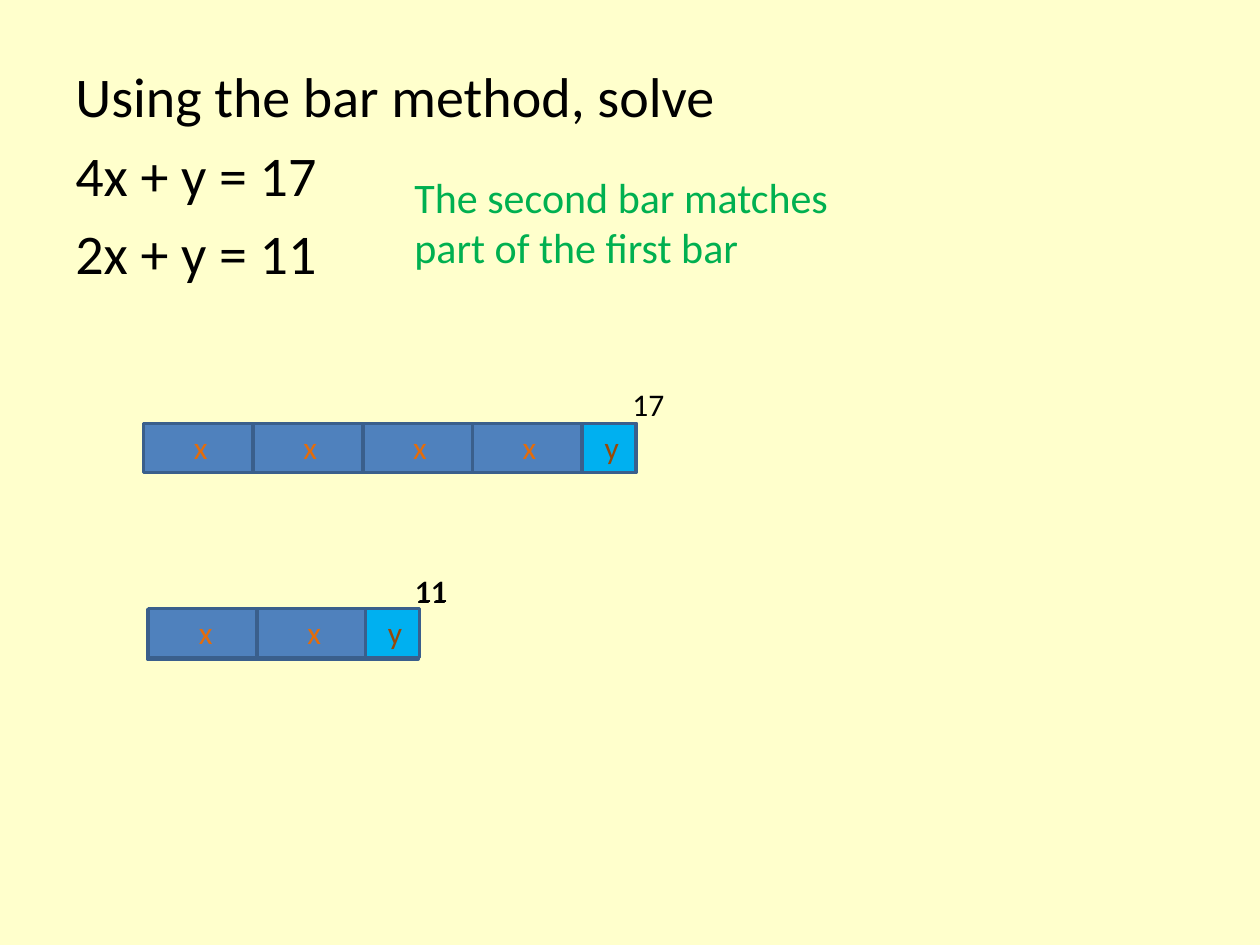
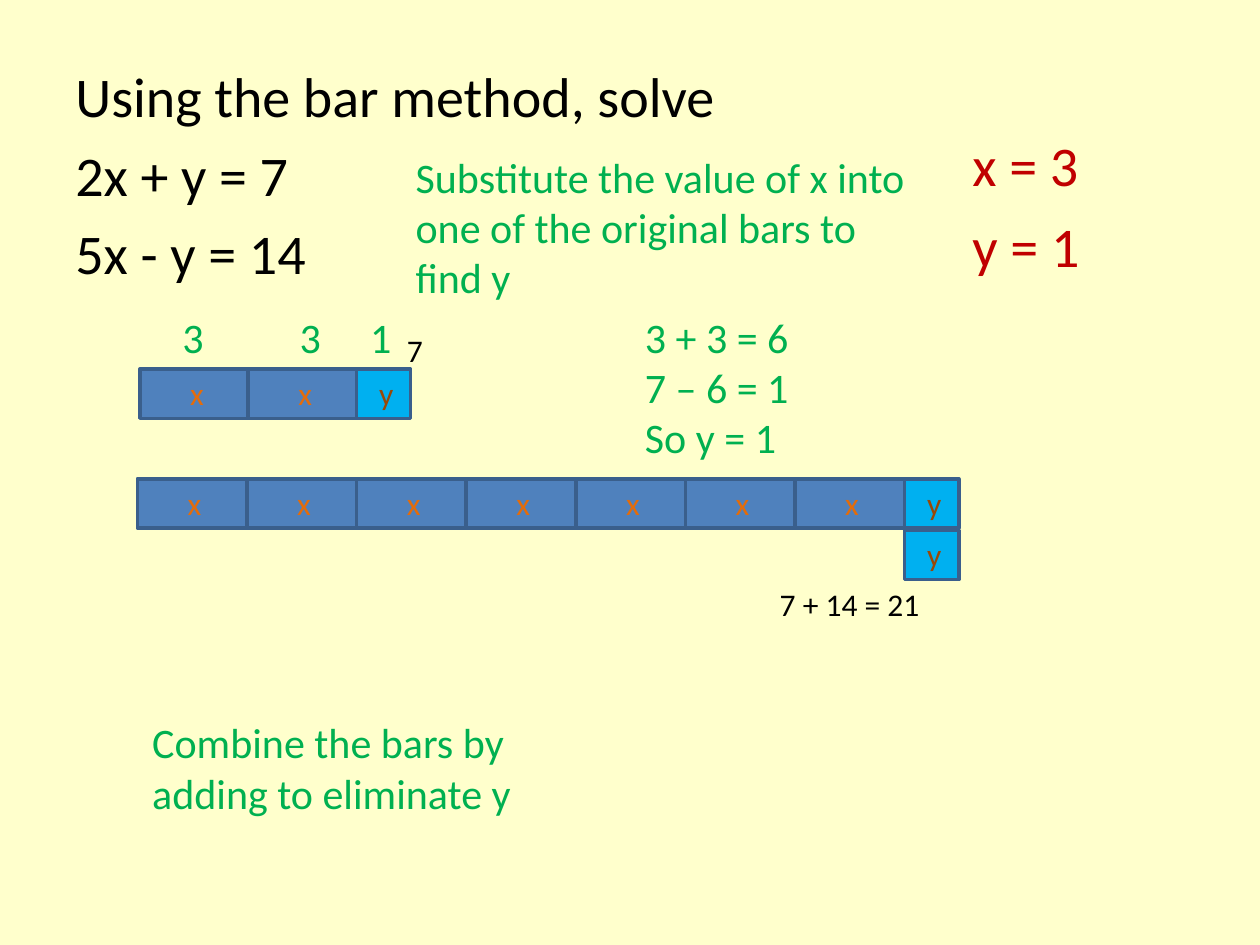
from dataclasses import dataclass

from pptx import Presentation
from pptx.dml.color import RGBColor
from pptx.enum.shapes import MSO_SHAPE as Shape
from pptx.util import Inches, Pt


@dataclass(frozen=True)
class Theme:
    font: str = "Calibri"
    background: str = "FFFFCC"
    ink: str = "000000"
    hint: str = "00B050"
    answer: str = "C00000"
    outline: str = "3A5F8C"
    x_fill: str = "4F81BD"
    y_fill: str = "00B0F0"
    x_text: str = "E46C0A"
    y_text: str = "984807"
    large: int = 32
    medium: int = 24
    small: int = 18


class Deck:
    x_width = 0.87
    y_width = 0.43
    bar_height = 0.39

    def __init__(self, theme):
        self.theme = theme
        self.presentation = Presentation()
        self.presentation.slide_width = Inches(10)
        self.presentation.slide_height = Inches(7.5)
        self.slide = None

    def add_slide(self, *equations):
        self.slide = self.presentation.slides.add_slide(self.presentation.slide_layouts[6])
        fill = self.slide.background.fill
        fill.solid()
        fill.fore_color.rgb = RGBColor.from_string(self.theme.background)
        lines = ("Using the bar method, solve", *equations)
        self.text(0.5, 0.44, 9, 2.36, lines, self.theme.large, self.theme.ink, space=6.4)

    def text(self, left, top, width, height, lines, size, color, space=0):
        box = self.slide.shapes.add_textbox(
            Inches(left), Inches(top), Inches(width), Inches(height))
        text_frame = box.text_frame
        text_frame.word_wrap = True
        text_frame.text = "\n".join(lines)
        for paragraph in text_frame.paragraphs:
            paragraph.space_before = Pt(space)
            for run in paragraph.runs:
                run.font.name = self.theme.font
                run.font.size = Pt(size)
                run.font.color.rgb = RGBColor.from_string(color)

    def hint(self, left, top, width, height, *lines):
        self.text(left, top, width, height, lines, self.theme.medium, self.theme.hint)

    def answer(self, top, line):
        self.text(7.62, top, 1.86, 0.64, [line], self.theme.large, self.theme.answer)

    def total(self, left, top, width, line):
        self.text(left, top, width, 0.4, [line], self.theme.small, self.theme.ink)

    def cell(self, left, top, term):
        theme = self.theme
        if term == "x":
            width, indent, fill, color = self.x_width, 0.3, theme.x_fill, theme.x_text
        else:
            width, indent, fill, color = self.y_width, 0.08, theme.y_fill, theme.y_text
        shape = self.slide.shapes.add_shape(
            Shape.RECTANGLE, Inches(left), Inches(top), Inches(width), Inches(self.bar_height))
        shape.shadow.inherit = False
        shape.fill.solid()
        shape.fill.fore_color.rgb = RGBColor.from_string(fill)
        shape.line.color.rgb = RGBColor.from_string(theme.outline)
        shape.line.width = Pt(2)
        self.text(left + indent, top - 0.01, 0.28, 0.4, [term], theme.small, color)

    def bar(self, left, top, terms, total=None, pitch=x_width):
        for index, term in enumerate(terms):
            self.cell(left + index * pitch, top, term)
        if total:
            end = left + (len(terms) - 1) * pitch + self.y_width
            self.total(end - 0.13, top - 0.35, 0.55, total)


def build_matching(deck):
    deck.add_slide("4x + y = 17", "2x + y = 11")
    deck.hint(3.19, 1.31, 4.09, 0.91, "The second bar matches part of the first bar")
    deck.bar(1.14, 3.36, "xxxxy", "17")
    for shift in (0, 0.01):
        deck.bar(1.17 + shift, 4.84 - shift, "xxy", "11", pitch=0.86)


def build_substitution(deck):
    deck.add_slide("2x + y = 7", "5x - y = 14")
    deck.hint(3.2, 1.15, 4.09, 1.31,
              "Substitute the value of x into one of the original bars to find y")
    deck.bar(1.11, 2.93, "xxy", "7", pitch=0.86)
    for left, value in ((1.35, "3"), (2.28, "3"), (2.84, "1")):
        deck.hint(left, 2.42, 0.43, 0.5, value)
    deck.bar(1.09, 3.8, "xxxxxxxy")
    deck.cell(7.18, 4.21, "y")
    deck.total(6.09, 4.59, 1.46, "7 + 14 = 21")
    deck.hint(1.11, 5.64, 3.36, 0.91, "Combine the bars by adding to eliminate y")
    deck.hint(5.02, 2.42, 1.75, 1.31, "3 + 3 = 6", "7 – 6 = 1", "So y = 1")
    deck.answer(0.99, "x = 3")
    deck.answer(1.63, "y = 1")


def main():
    deck = Deck(Theme())
    build_matching(deck)
    build_substitution(deck)
    deck.presentation.save("out.pptx")


if __name__ == "__main__":
    main()
